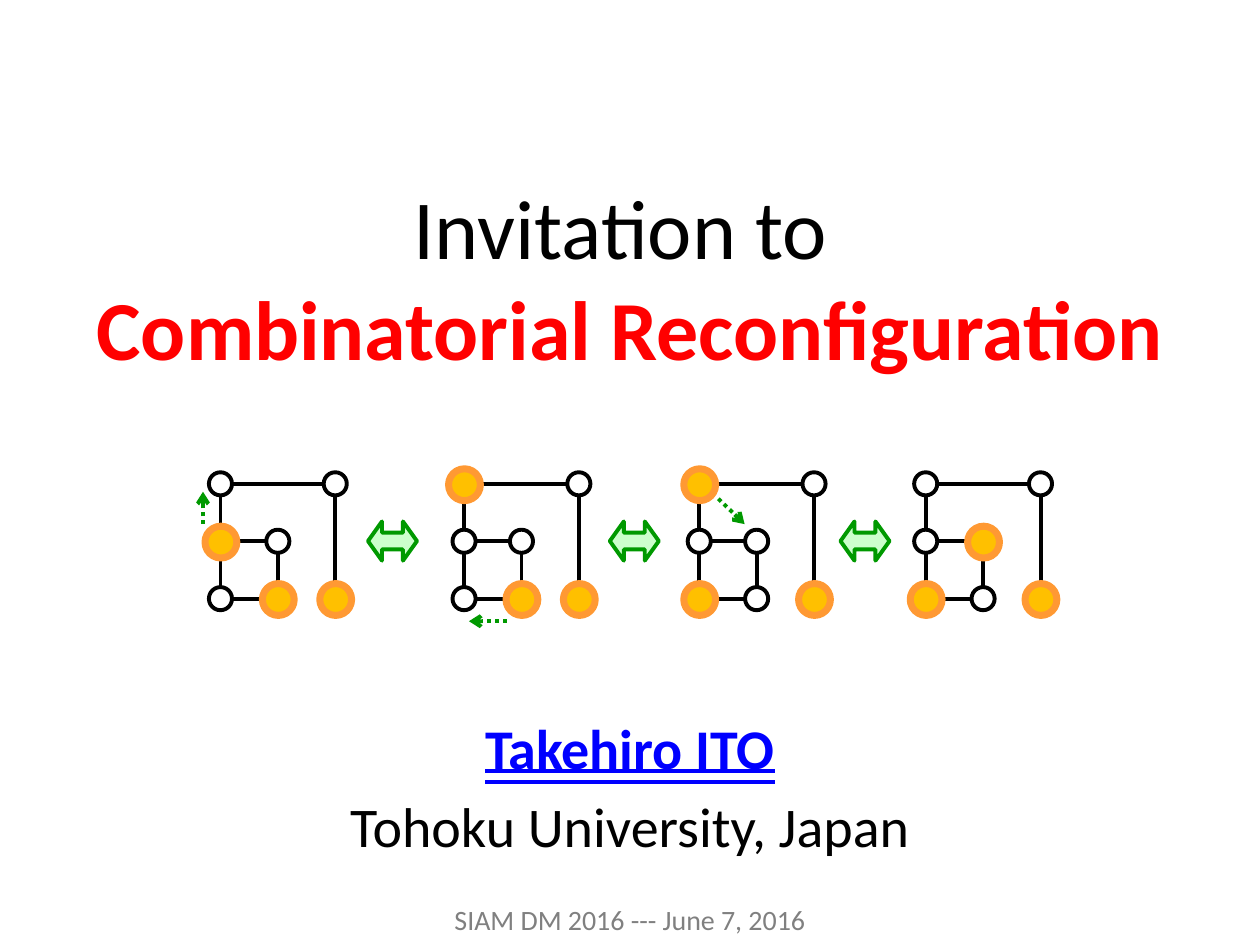
import pptx
import pptx.util
import pptx.dml.color
import pptx.enum.dml
import pptx.enum.shapes
import pptx.enum.text
import pptx.oxml
import pptx.oxml.ns

Pt = pptx.util.Pt
SHAPE = pptx.enum.shapes.MSO_SHAPE
COLORS = {
    "black": "000000", "white": "FFFFFF", "red": "FF0000", "blue": "0000FF",
    "gray": "808080", "token": "FFC000", "token_edge": "FF9933",
    "move": "009900", "arrow_fill": "CCFFCC",
}
NAMESPACE = pptx.oxml.ns.nsdecls("a")
TEXT_SHADOW = (
    f'<a:effectLst {NAMESPACE}><a:outerShdw blurRad="38100" dist="38100" dir="2700000" algn="tl">'
    '<a:srgbClr val="000000"><a:alpha val="43000"/></a:srgbClr></a:outerShdw></a:effectLst>'
)


def rgb(name):
    return pptx.dml.color.RGBColor.from_string(COLORS[name])


def add_line(shapes, start, end, color):
    connector = shapes.add_connector(
        pptx.enum.shapes.MSO_CONNECTOR.STRAIGHT, *(Pt(value) for value in start + end))
    connector.line.color.rgb = rgb(color)
    connector.line.width = Pt(2.25)
    connector._element.spPr.append(pptx.oxml.parse_xml(f"<a:effectLst {NAMESPACE}/>"))
    return connector


presentation = pptx.Presentation()
presentation.slide_width, presentation.slide_height = Pt(720), Pt(540)
slide = presentation.slides.add_slide(presentation.slide_layouts[0])

# Title, author and venue
title, subtitle = slide.shapes.title, slide.placeholders[1]
venue = slide.shapes.add_textbox(0, 0, 0, 0)
title.text_frame.text = "Invitation to \vCombinatorial Reconfiguration"
subtitle.text_frame.text = "Takehiro ITO\nTohoku University, Japan"
venue.text_frame.text = "SIAM DM 2016 --- June 7, 2016"

for shape, box, size, run_colors in [
    (title, (0, 77, 720, 162), 48, ["black", "red"]),
    (subtitle, (108, 404, 504, 93), 32, ["blue", "black"]),
    (venue, (144.75, 512, 430.5, 26.6), 16, ["gray"]),
]:
    shape.left, shape.top, shape.width, shape.height = (Pt(value) for value in box)
    shape.text_frame.word_wrap = True
    shape.text_frame.auto_size = pptx.enum.text.MSO_AUTO_SIZE.NONE
    for paragraph in shape.text_frame.paragraphs:
        paragraph.alignment = pptx.enum.text.PP_ALIGN.CENTER
    runs = [run for paragraph in shape.text_frame.paragraphs for run in paragraph.runs]
    for run, color in zip(runs, run_colors):
        run.font.name = "Calibri"
        run.font.size = Pt(size)
        run.font.color.rgb = rgb(color)
        run.font.bold = color in ("red", "blue")

for run in title.text_frame.paragraphs[0].runs:
    fill = run.font._element.find(pptx.oxml.ns.qn("a:solidFill"))
    fill.addnext(pptx.oxml.parse_xml(TEXT_SHADOW))
author = subtitle.text_frame.paragraphs[0].runs[0]
author.font.underline = pptx.enum.text.MSO_UNDERLINE.DOUBLE_LINE

# Four graphs on a 3 by 3 grid; nodes and tokens are (column, row)
PITCH, TOP = 32.8, 276.5
NODE, TOKEN = 13.2, 18.2
NODES = [(0, 2), (1, 2), (0, 1), (1, 1), (0, 0), (2, 2), (2, 0)]
GRAPHS = [
    (126, [(0, 1), (1, 2), (2, 2)]),
    (265.2, [(0, 0), (1, 2), (2, 2)]),
    (399.6, [(0, 0), (0, 2), (2, 2)]),
    (529, [(1, 1), (0, 2), (2, 2)]),
]
for left, tokens in GRAPHS:
    graph = slide.shapes.add_group_shape().shapes
    square = graph.add_shape(
        SHAPE.RECTANGLE, Pt(left), Pt(TOP + PITCH), Pt(PITCH), Pt(PITCH))
    square.fill.background()
    square.line.color.rgb = rgb("black")
    square.line.width = Pt(2.25)
    square.shadow.inherit = False

    right, radius = left + 2 * PITCH, NODE / 2
    for start, end in [
        ((left, TOP + PITCH - radius), (left, TOP + radius)),
        ((left + radius, TOP), (right - radius, TOP)),
        ((right, TOP + radius), (right, TOP + 2 * PITCH - radius)),
    ]:
        add_line(graph, start, end, "black")

    for cells, diameter, shift, fill, edge, width in [
        (NODES, NODE, 0, "white", "black", 2.25),
        (tokens, TOKEN, 0.5, "token", "token_edge", 4),
    ]:
        for column, row in cells:
            circle = graph.add_shape(
                SHAPE.OVAL,
                Pt(left + column * PITCH - diameter / 2 + shift / 2),
                Pt(TOP + row * PITCH - diameter / 2 + shift),
                Pt(diameter), Pt(diameter))
            circle.fill.solid()
            circle.fill.fore_color.rgb = rgb(fill)
            circle.line.color.rgb = rgb(edge)
            circle.line.width = Pt(width)
            circle.shadow.inherit = False

# Two-way arrows between neighbouring graphs
for left in (210.3, 348.5, 480.3):
    arrow = slide.shapes.add_shape(
        SHAPE.LEFT_RIGHT_ARROW, Pt(left), Pt(298), Pt(28), Pt(22.4))
    arrow.adjustments[0], arrow.adjustments[1] = 0.429, 0.358
    arrow.fill.solid()
    arrow.fill.fore_color.rgb = rgb("arrow_fill")
    arrow.line.color.rgb = rgb("move")
    arrow.line.width = Pt(2.25)
    arrow.shadow.inherit = False

# Dotted arrows showing the next token move
for start, end in [
    ((116, 299.5), (116, 281)),
    ((289.5, 355), (268, 355)),
    ((410.5, 285), (425.5, 299.5)),
]:
    move = add_line(slide.shapes, start, end, "move")
    move.line.dash_style = pptx.enum.dml.MSO_LINE.ROUND_DOT
    move.line._get_or_add_ln().append(
        pptx.oxml.parse_xml(f'<a:tailEnd {NAMESPACE} type="arrow"/>'))

presentation.save("out.pptx")
